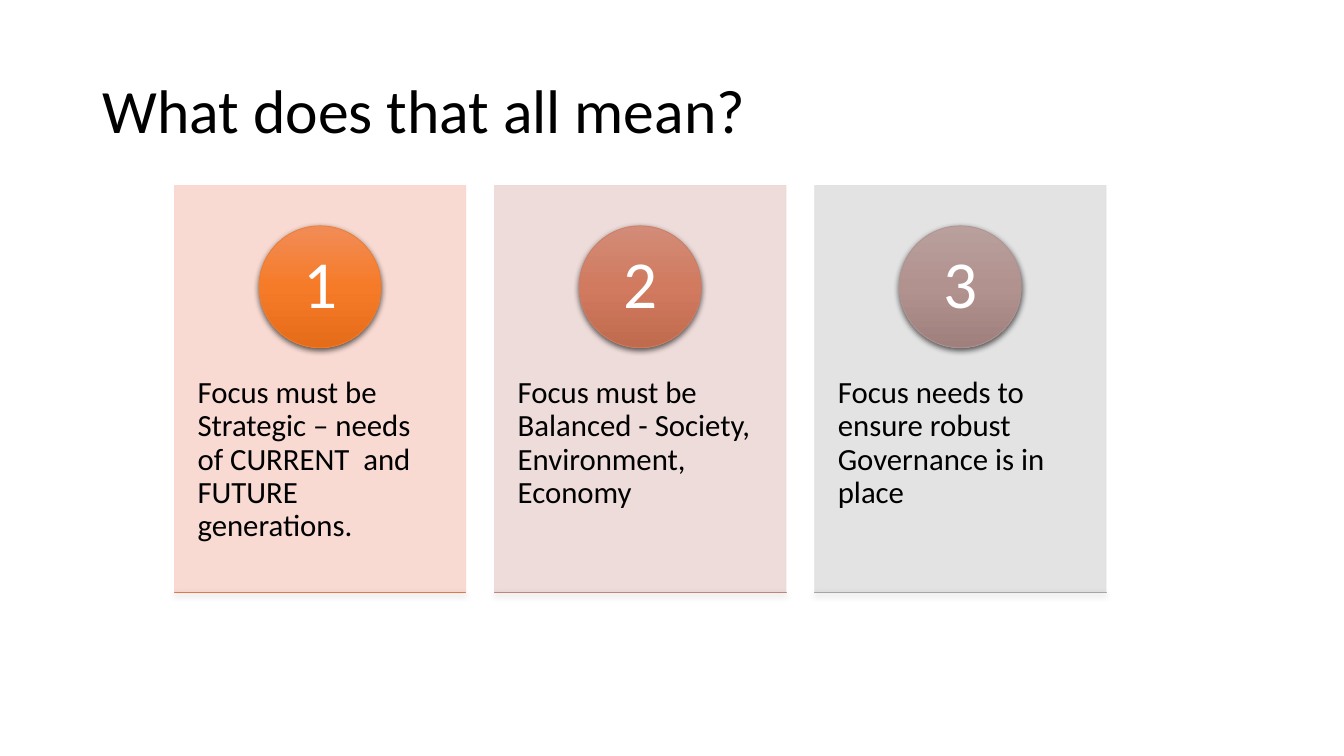
from dataclasses import dataclass

from lxml.etree import SubElement
from pptx import Presentation
from pptx.dml.color import RGBColor
from pptx.enum.shapes import MSO_SHAPE as Preset
from pptx.enum.text import MSO_ANCHOR as Anchor, PP_ALIGN as Align
from pptx.oxml.ns import qn
from pptx.shapes.autoshape import Shape
from pptx.shapes.shapetree import GroupShapes, SlideShapes
from pptx.util import Inches, Pt

BLACK = RGBColor(0x00, 0x00, 0x00)
WHITE = RGBColor(0xFF, 0xFF, 0xFF)
FONT = "Calibri"
FIRST_LEFT, CARD_TOP, CARD_STEP = 1.73, 1.84, 3.175
CARD_WIDTH, CARD_HEIGHT = 2.89, 4.04
CIRCLE_SIZE, NUMBER_SIZE = 1.21, 0.86


@dataclass(frozen=True)
class Shading:
    top: RGBColor
    middle: RGBColor
    bottom: RGBColor
    line: RGBColor


@dataclass(frozen=True)
class Card:
    message: str
    background: RGBColor
    circle: Shading
    rule: Shading


def shading(*colors: str) -> Shading:
    return Shading(*map(RGBColor.from_string, colors))


CARDS = [
    Card("Focus must be Strategic – needs of CURRENT  and FUTURE generations.",
         RGBColor(0xF8, 0xD7, 0xCE),
         shading("F18C57", "F67B28", "E56C19", "ED7D31"),
         shading("E18A66", "E37744", "D26734", "DC7A4B")),
    Card("Focus must be Balanced - Society, Environment, Economy",
         RGBColor(0xED, 0xD9, 0xD7),
         shading("D28C78", "D17A5F", "C06A4E", "CC7D64"),
         shading("C5948B", "C18478", "AF7267", "BD867B")),
    Card("Focus needs to ensure robust Governance is in place",
         RGBColor(0xE1, 0xE1, 0xE1),
         shading("B9A09D", "B2928F", "A0807D", "B09391"),
         shading("AFAFAF", "A5A5A5", "939393", "A5A5A5")),
]


def add_text(shapes: SlideShapes | GroupShapes, text: str, left: float, top: float,
             width: float, height: float, *, size: float, color: RGBColor = BLACK,
             align: Align = Align.LEFT, anchor: Anchor = Anchor.TOP,
             inset_x: float = 0.1, inset_y: float = 0.05) -> None:
    box = shapes.add_textbox(Inches(left), Inches(top), Inches(width), Inches(height))
    frame = box.text_frame
    frame.word_wrap = True
    frame.vertical_anchor = anchor
    frame.margin_left = frame.margin_right = Inches(inset_x)
    frame.margin_top = frame.margin_bottom = Inches(inset_y)
    paragraph = frame.paragraphs[0]
    paragraph.alignment = align
    paragraph.line_spacing = 0.9
    run = paragraph.add_run()
    run.text = text
    run.font.name = FONT
    run.font.size = Pt(size)
    run.font.color.rgb = color


def add_outlined(shapes: GroupShapes, preset: Preset, left: float, top: float,
                 width: float, height: float, line: RGBColor) -> Shape:
    shape = shapes.add_shape(preset, Inches(left), Inches(top), Inches(width), Inches(height))
    shape.shadow.inherit = False
    shape.line.color.rgb = line
    shape.line.width = Pt(0.5)
    return shape


def add_panel(shapes: GroupShapes, left: float, color: RGBColor) -> None:
    panel = add_outlined(shapes, Preset.RECTANGLE, left, CARD_TOP, CARD_WIDTH, CARD_HEIGHT, color)
    panel.fill.solid()
    panel.fill.fore_color.rgb = color
    for element in panel._element.spPr.iter(qn("a:srgbClr")):
        SubElement(element, qn("a:alpha"), val="90000")


def add_shaded(shapes: GroupShapes, preset: Preset, left: float, top: float,
               width: float, height: float, colors: Shading) -> None:
    shape = add_outlined(shapes, preset, left, top, width, height, colors.line)
    shape.fill.gradient()
    shape.fill.gradient_angle = 270
    properties = shape._element.spPr
    stops = properties.find(f"{qn('a:gradFill')}/{qn('a:gsLst')}")
    for stop in list(stops):
        stops.remove(stop)
    for position, color in ((0, colors.top), (50000, colors.middle), (100000, colors.bottom)):
        stop = SubElement(stops, qn("a:gs"), pos=str(position))
        SubElement(stop, qn("a:srgbClr"), val=str(color))
    shadow = SubElement(properties.find(qn("a:effectLst")), qn("a:outerShdw"),
                        blurRad=str(Pt(4.5)), dist=str(Pt(1.5)), dir="5400000",
                        algn="ctr", rotWithShape="0")
    shadow_color = SubElement(shadow, qn("a:srgbClr"), val=str(BLACK))
    SubElement(shadow_color, qn("a:alpha"), val="63000")


def add_card(shapes: GroupShapes, number: int, card: Card) -> None:
    left = FIRST_LEFT + (number - 1) * CARD_STEP
    circle_left = left + (CARD_WIDTH - CIRCLE_SIZE) / 2
    circle_top = CARD_TOP + 0.4
    number_offset = (CIRCLE_SIZE - NUMBER_SIZE) / 2
    add_panel(shapes, left, card.background)
    add_text(shapes, card.message, left, 3.38, CARD_WIDTH, 2.42,
             size=22, inset_x=0.23, inset_y=0.36)
    add_shaded(shapes, Preset.OVAL, circle_left, circle_top, CIRCLE_SIZE, CIRCLE_SIZE, card.circle)
    add_text(shapes, str(number), circle_left + number_offset, circle_top + number_offset,
             NUMBER_SIZE, NUMBER_SIZE, size=48, color=WHITE, align=Align.CENTER,
             anchor=Anchor.MIDDLE, inset_x=0.09, inset_y=0.01)
    add_shaded(shapes, Preset.RECTANGLE, left, CARD_TOP + CARD_HEIGHT, CARD_WIDTH, 0, card.rule)


def main() -> None:
    presentation = Presentation()
    presentation.slide_width = Inches(13.33)
    presentation.slide_height = Inches(7.5)
    slide = presentation.slides.add_slide(presentation.slide_layouts[6])
    add_text(slide.shapes, "What does that all mean?", 0.92, 0.4, 11.5, 1.45,
             size=44, anchor=Anchor.MIDDLE)
    cards = slide.shapes.add_group_shape()
    for number, card in enumerate(CARDS, start=1):
        add_card(cards.shapes, number, card)
    presentation.save("out.pptx")


if __name__ == "__main__":
    main()
